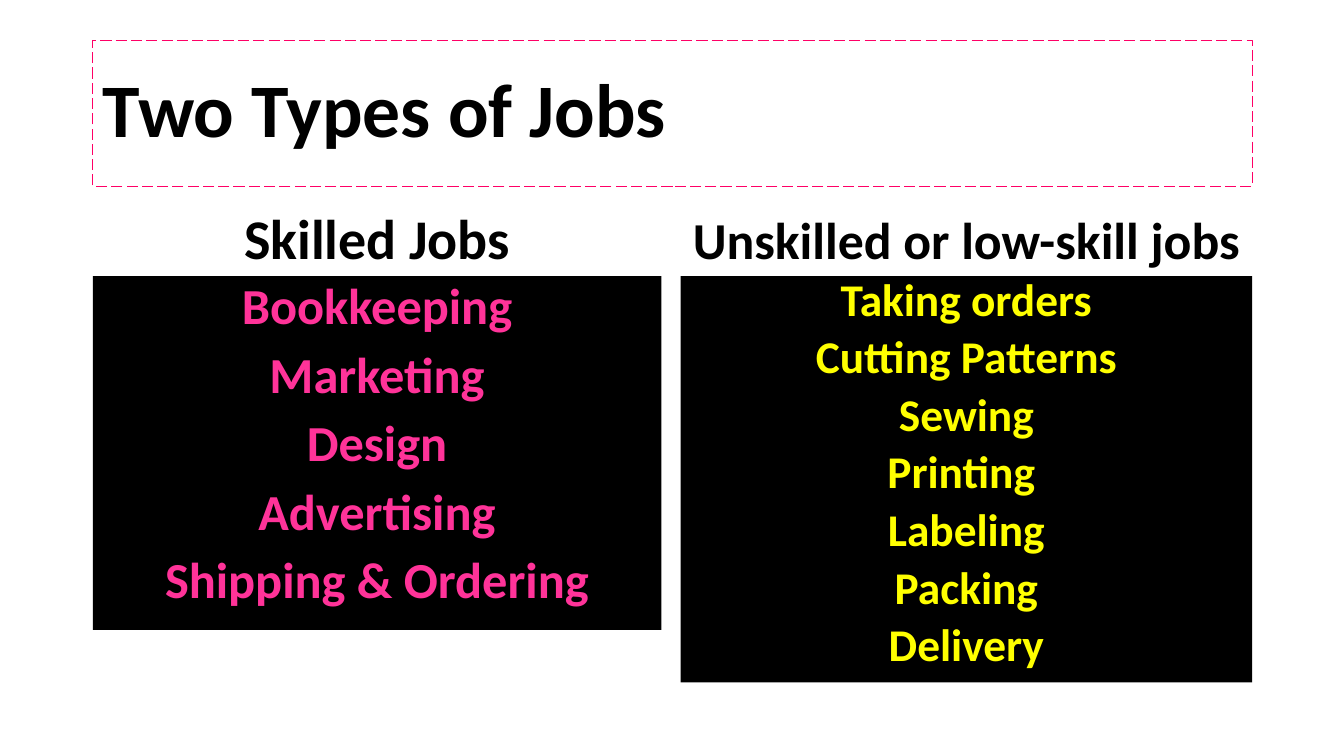
import pptx
import pptx.dml.color
import pptx.enum.dml
import pptx.enum.text
import pptx.oxml.ns
import pptx.util
import lxml.etree

Inches = pptx.util.Inches
Pt = pptx.util.Pt
RGBColor = pptx.dml.color.RGBColor
ALIGN = pptx.enum.text.PP_ALIGN
ANCHOR = pptx.enum.text.MSO_ANCHOR

BLACK = RGBColor(0x00, 0x00, 0x00)
CRIMSON = RGBColor(0xFF, 0x00, 0x66)
PINK = RGBColor(0xFF, 0x33, 0x99)
YELLOW = RGBColor(0xFF, 0xFF, 0x00)

FONT = "Calibri"
HEADING_TOP = 1.84
HEADING_HEIGHT = 0.9
LIST_TOP = HEADING_TOP + HEADING_HEIGHT
HANGING = 0.25

COLUMNS = [
    {"left": 0.92, "width": 5.64, "heading": "Skilled Jobs", "heading_size": 40,
     "jobs": ["Bookkeeping", "Marketing", "Design", "Advertising", "Shipping & Ordering"],
     "height": 3.51, "size": 36, "color": PINK, "spacing": 0.9},
    {"left": 6.75, "width": 5.67, "heading": "Unskilled or low-skill jobs", "heading_size": 37,
     "jobs": ["Taking orders", "Cutting Patterns", "Sewing", "Printing ", "Labeling",
              "Packing", "Delivery"],
     "height": 4.03, "size": 32.4, "color": YELLOW, "spacing": 0.8},
]


class JobsSlide:
    def __init__(self, presentation):
        layout = presentation.slide_layouts.get_by_name("Comparison")
        self.slide = presentation.slides.add_slide(layout)

    def fill_placeholder(self, index, box, lines, size, color, anchor,
                         alignment=ALIGN.CENTER, spacing=0.9, hanging=0):
        shape = self.slide.placeholders[index]
        for name, value in zip(("left", "top", "width", "height"), box):
            setattr(shape, name, Inches(value))
        frame = shape.text_frame
        frame_format = {"word_wrap": True, "vertical_anchor": anchor,
                        "auto_size": pptx.enum.text.MSO_AUTO_SIZE.NONE}
        for name, value in frame_format.items():
            setattr(frame, name, value)
        frame.text = "\n".join(lines)
        for number, paragraph in enumerate(frame.paragraphs):
            properties = paragraph._p.get_or_add_pPr()
            properties.set("marL", str(Inches(hanging)))
            properties.set("indent", str(Inches(-hanging)))
            lxml.etree.SubElement(properties, pptx.oxml.ns.qn("a:buNone"))
            paragraph_format = {"alignment": alignment, "line_spacing": spacing,
                                "space_before": Pt(10 if number else 0),
                                "space_after": Pt(0)}
            for name, value in paragraph_format.items():
                setattr(paragraph, name, value)
            font = paragraph.runs[0].font
            for name, value in {"name": FONT, "size": Pt(size), "bold": True}.items():
                setattr(font, name, value)
            font.color.rgb = color
        return shape

    def add_title(self, text):
        shape = self.fill_placeholder(0, (0.92, 0.4, 11.5, 1.45), [text], 54, BLACK,
                                      ANCHOR.MIDDLE, ALIGN.LEFT)
        shape.line.color.rgb = CRIMSON
        shape.line.width = Pt(1)
        shape.line.dash_style = pptx.enum.dml.MSO_LINE.LONG_DASH

    def add_heading(self, index, column):
        box = (column["left"], HEADING_TOP, column["width"], HEADING_HEIGHT)
        self.fill_placeholder(index, box, [column["heading"]], column["heading_size"],
                              BLACK, ANCHOR.BOTTOM)

    def add_job_list(self, index, column):
        box = (column["left"], LIST_TOP, column["width"], column["height"])
        shape = self.fill_placeholder(index, box, column["jobs"], column["size"],
                                      column["color"], ANCHOR.TOP,
                                      spacing=column["spacing"], hanging=HANGING)
        shape.fill.solid()
        shape.fill.fore_color.rgb = BLACK


def main():
    presentation = pptx.Presentation()
    presentation.slide_width = Inches(13.33)
    presentation.slide_height = Inches(7.5)
    jobs_slide = JobsSlide(presentation)
    jobs_slide.add_title("Two Types of Jobs")
    for number, column in enumerate(COLUMNS):
        jobs_slide.add_heading(2 * number + 1, column)
        jobs_slide.add_job_list(2 * number + 2, column)
    presentation.save("out.pptx")


if __name__ == "__main__":
    main()
